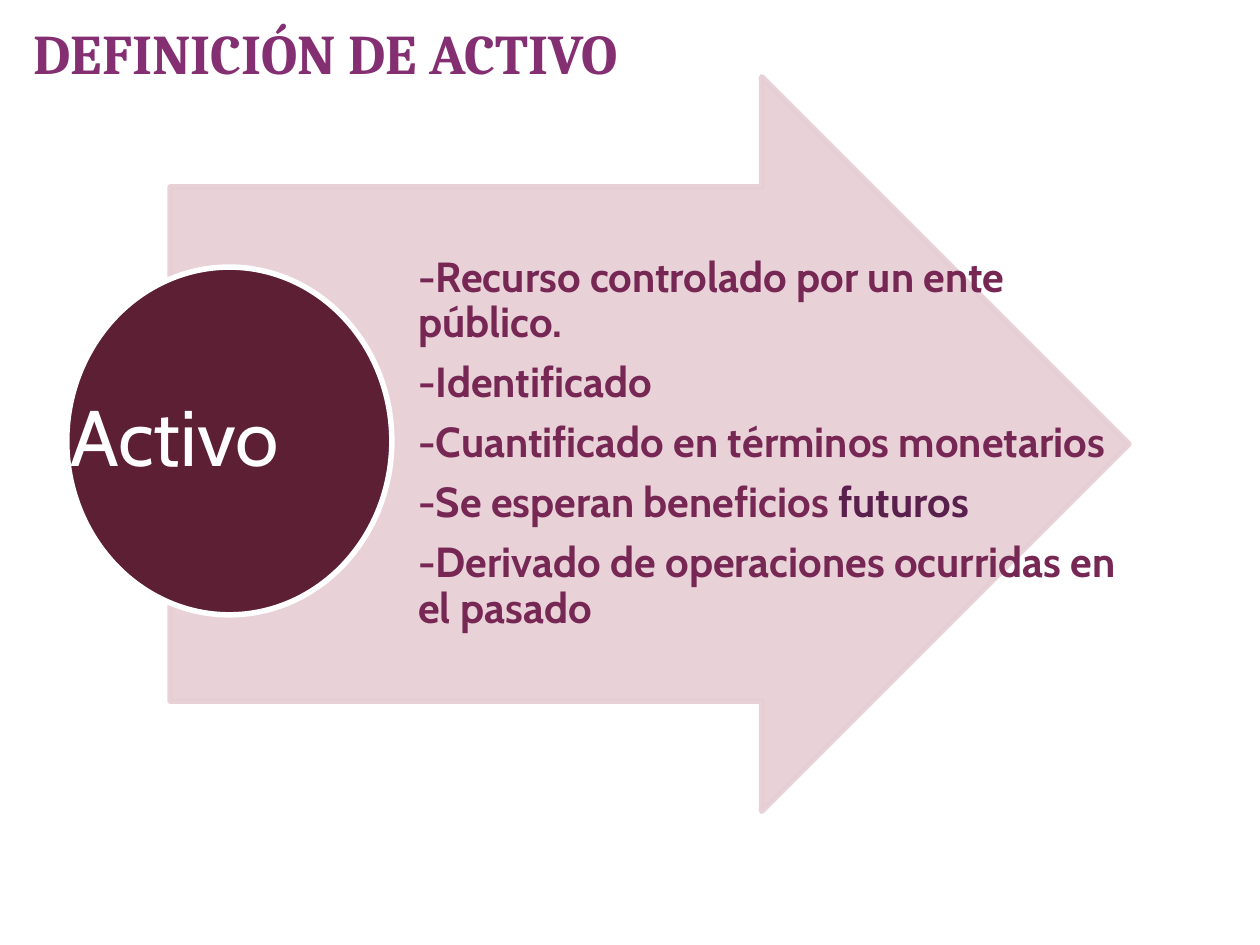
"""Build the slide that defines an asset with a circle and a large arrow."""
from lxml.etree import SubElement
from pptx import Presentation
from pptx.dml.color import RGBColor
from pptx.enum.shapes import MSO_SHAPE as SHAPE
from pptx.enum.text import MSO_ANCHOR as ANCHOR, PP_ALIGN as ALIGN
from pptx.oxml.ns import qn
from pptx.util import Pt

PINK = RGBColor(0xE6, 0xCE, 0xD4)
WINE = RGBColor(0x5C, 0x1F, 0x34)
WHITE = RGBColor(0xFF, 0xFF, 0xFF)
BERRY = RGBColor(0x77, 0x27, 0x54)
PLUM = RGBColor(0x59, 0x1F, 0x4D)
PURPLE = RGBColor(0x85, 0x2F, 0x73)

TRAITS = [
    [("-Recurso controlado por un ente público.", BERRY)],
    [("-Identificado", BERRY)],
    [("-Cuantificado en términos monetarios", BERRY)],
    [("-Se esperan beneficios ", BERRY), ("futuros", PLUM)],
    [("-Derivado de operaciones ocurridas en el pasado", BERRY)],
]


def add_figure(kind, box, fill, line):
    figure = slide.shapes.add_shape(kind, *map(Pt, box))
    figure.shadow.inherit = False
    figure.fill.solid()
    figure.fill.fore_color.rgb = fill
    figure.line.color.rgb = line
    figure.line.width = Pt(3.15)
    return figure


def add_text(box, insets, anchor, paragraphs, font, size, bold, spacing=None, align=ALIGN.LEFT):
    frame = slide.shapes.add_textbox(*map(Pt, box)).text_frame
    frame.word_wrap = True
    frame.vertical_anchor = anchor
    frame.margin_left, frame.margin_top, frame.margin_right, frame.margin_bottom = map(Pt, insets)
    for index, runs in enumerate(paragraphs):
        paragraph = frame.paragraphs[0] if index == 0 else frame.add_paragraph()
        paragraph.alignment = align
        if spacing:
            paragraph.line_spacing = spacing
            paragraph.space_after = Pt(0.35 * size)
        for words, color in runs:
            run = paragraph.add_run()
            run.text = words
            run.font.name = font
            run.font.size = Pt(size)
            run.font.bold = bold
            run.font.color.rgb = color


prs = Presentation()
prs.slide_width, prs.slide_height = Pt(720), Pt(540)
slide = prs.slides.add_slide(prs.slide_layouts[6])

arrow = add_figure(SHAPE.RIGHT_ARROW, (97.2, 43.92, 547.92, 419.76), PINK, PINK)
arrow.adjustments[0], arrow.adjustments[1] = 0.7, 0.5
for color in arrow.element.spPr.iter(qn("a:srgbClr")):
    SubElement(color, qn("a:alpha"), val="90000")

add_text((234, 43.92, 411.12, 419.76), (5.04, 1.44, 2.16, 1.44), ANCHOR.MIDDLE,
         TRAITS, "Cabin", 24, True, 0.9)

circle_box = (38.16, 152.64, 185.76, 198.72)
add_figure(SHAPE.OVAL, circle_box, WINE, WHITE)
add_text(circle_box, (2.16,) * 4, ANCHOR.MIDDLE,
         [[("Activo", WHITE)]], "Cabin", 45, False, 0.9, ALIGN.JUSTIFY)

add_text((12.24, 7.2, 444.24, 46.08), (7.2, 3.6, 7.2, 3.6), ANCHOR.TOP,
         [[("DEFINICIÓN DE ACTIVO", PURPLE)]], "Cambria", 32, True)

prs.save("out.pptx")
